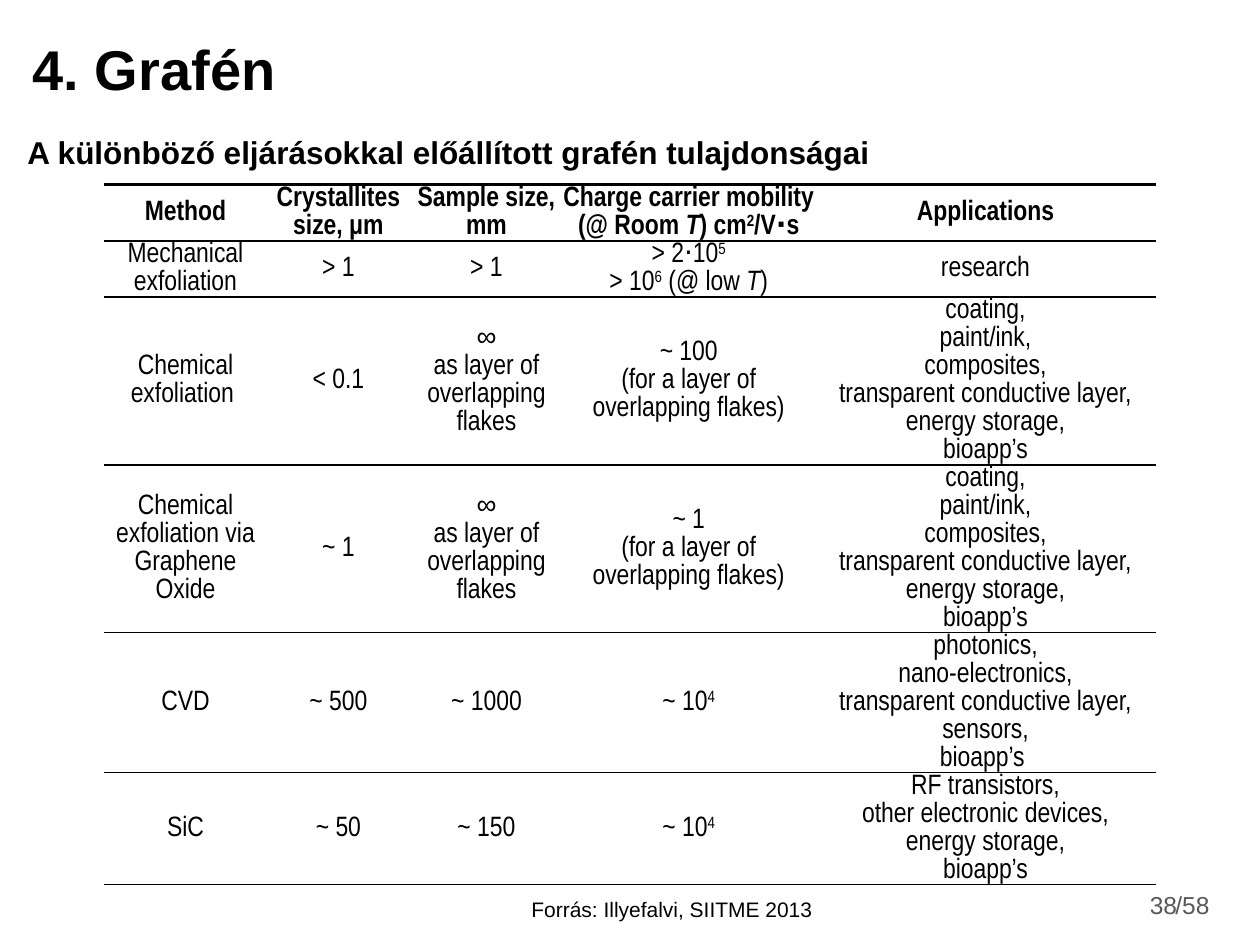
"""Build the slide that compares graphene production methods."""
from pptx import Presentation
from pptx.dml.color import RGBColor
from pptx.enum.text import MSO_ANCHOR as Anchor, PP_ALIGN as Align
from pptx.oxml import parse_xml
from pptx.oxml.ns import nsdecls
from pptx.util import Pt

BLACK = RGBColor(0x00, 0x00, 0x00)
GRAY = RGBColor(0x59, 0x59, 0x59)
LINE_PITCH = 16


def add_label(text, left, top, width, height, size, color=BLACK, wrap=False):
    frame = slide.shapes.add_textbox(Pt(left), Pt(top), Pt(width), Pt(height)).text_frame
    frame.word_wrap = wrap
    frame.text = text
    font = frame.paragraphs[0].runs[0].font
    font.name, font.size, font.color.rgb = "Arial", Pt(size), color
    return frame


def add_border(cell, side, width):
    fill = f'<a:solidFill><a:srgbClr val="{str(BLACK)}"/></a:solidFill>' if width else "<a:noFill/>"
    cell._tc.get_or_add_tcPr().append(
        parse_xml(f'<a:{side} {nsdecls("a")} w="{int(Pt(width))}">{fill}</a:{side}>'))


presentation = Presentation()
presentation.slide_width, presentation.slide_height = Pt(720), Pt(540)
slide = presentation.slides.add_slide(presentation.slide_layouts[5])

title = slide.shapes.title
title.left, title.top, title.width, title.height = Pt(11.5), Pt(-5.8), Pt(648), Pt(90)
title.text_frame.text = "4. Grafén"
title.text_frame.vertical_anchor = Anchor.MIDDLE
heading = title.text_frame.paragraphs[0]
heading.alignment = Align.LEFT
heading_font = heading.runs[0].font
heading_font.name, heading_font.size, heading_font.bold = "Arial", Pt(32), True
heading_font.color.rgb = BLACK

subtitle = add_label("A különböző eljárásokkal előállított grafén tulajdonságai",
                     8.6, 66.2, 686, 32.4, 18, wrap=True).paragraphs[0]
subtitle.line_spacing = 1.3
subtitle.runs[0].font.bold = True

add_label("Forrás: Illyefalvi, SIITME 2013", 296.6, 509, 176.4, 21.6, 12)
page_total = add_label("/58", 664.6, 502.6, 33.8, 28.8, 14, GRAY)
page_number = add_label("38", 578.2, 502.6, 101.5, 28.8, 14, GRAY, wrap=True)
page_number.paragraphs[0].alignment = Align.RIGHT
for page_part in (page_total, page_number):
    page_part.vertical_anchor = Anchor.MIDDLE

FLAKES = "∞\nas layer of overlapping flakes"
LAYER = "(for a layer of overlapping flakes)"
COATINGS = ("coating,\npaint/ink,\ncomposites,\ntransparent conductive layer,\n"
            "energy storage,\nbioapp’s")
methods = [
    (2, "Method", "Crystallites size, μm", "Sample size, mm",
     "Charge carrier mobility (@ Room |T|) cm|2|/V⋅s", "Applications"),
    (2, "Mechanical exfoliation", "> 1", "> 1",
     "> 2⋅10|5\n> 10|6| (@ low |T|)", "research"),
    (6, "Chemical exfoliation ", "< 0.1", FLAKES, "~ 100\n" + LAYER, COATINGS),
    (6, "Chemical exfoliation via Graphene Oxide", "~ 1", FLAKES, "~ 1\n" + LAYER, COATINGS),
    (5, "CVD", "~ 500", "~ 1000", "~ 10|4",
     "photonics,\nnano-electronics,\ntransparent conductive layer,\nsensors,\nbioapp’s "),
    (4, "SiC", "~ 50", "~ 150", "~ 10|4",
     "RF transistors,\nother electronic devices,\nenergy storage,\nbioapp’s"),
]
column_widths = [92.8, 82, 87.2, 144, 195.2]
total_lines = sum(method[0] for method in methods)
properties = slide.shapes.add_table(
    len(methods), len(column_widths), Pt(59.6), Pt(105.6),
    Pt(sum(column_widths)), Pt(total_lines * LINE_PITCH)).table
properties.first_row = properties.horz_banding = False
for column, width in zip(properties.columns, column_widths):
    column.width = Pt(width)

for row_index, (line_count, *entries) in enumerate(methods):
    properties.rows[row_index].height = Pt(line_count * LINE_PITCH)
    for column_index, entry in enumerate(entries):
        cell = properties.cell(row_index, column_index)
        cell.margin_left = cell.margin_right = cell.margin_top = cell.margin_bottom = 0
        cell.vertical_anchor = Anchor.MIDDLE
        top_width = 1 if row_index else 2.25
        for side, width in (("lnL", 0), ("lnR", 0), ("lnT", top_width), ("lnB", 1)):
            add_border(cell, side, width)
        cell.fill.background()
        cell.text_frame.text = entry
        for paragraph, line in zip(cell.text_frame.paragraphs, entry.split("\n")):
            paragraph.clear()
            paragraph.alignment = Align.CENTER
            paragraph.line_spacing = Pt(LINE_PITCH)
            for piece in line.split("|"):
                run = paragraph.add_run()
                run.text = piece
                font = run.font
                font.name, font.size, font.color.rgb = "Arial Narrow", Pt(16), BLACK
                font.bold = row_index == 0
                font.italic = piece == "T"
                if piece.isdigit():
                    run._r.get_or_add_rPr().set("baseline", "30000")

presentation.save("out.pptx")
